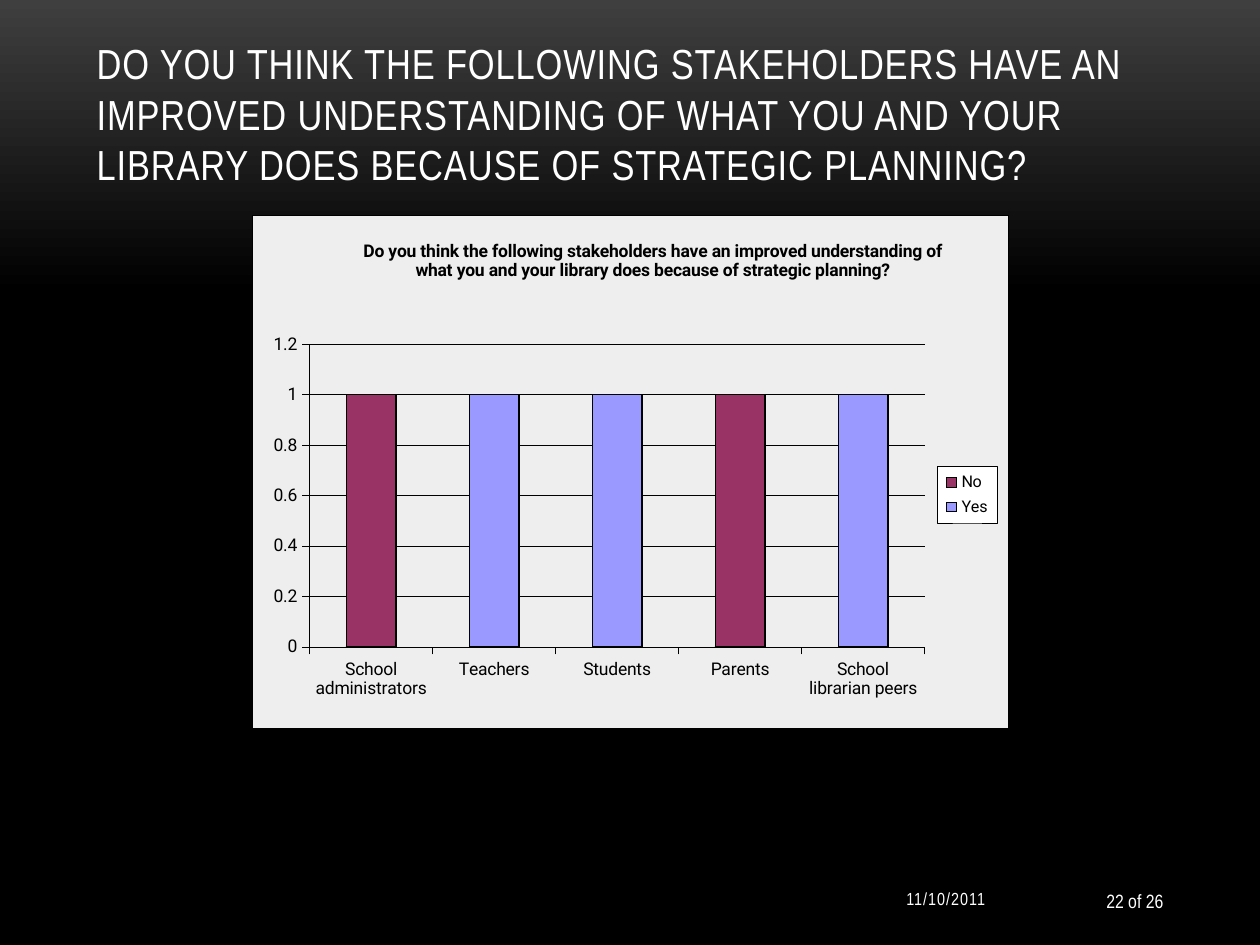
"""Build the survey slide on stakeholders' understanding of strategic planning."""
from pptx import Presentation
from pptx.chart.data import CategoryChartData
from pptx.dml.color import RGBColor as RGB
from pptx.enum.chart import XL_CHART_TYPE as ChartType, XL_LEGEND_POSITION as LegendSide, XL_TICK_MARK as Tick
from pptx.enum.text import MSO_ANCHOR as Anchor, MSO_AUTO_SIZE as AutoSize, PP_ALIGN as Align
from pptx.oxml import parse_xml
from pptx.oxml.ns import nsdecls, qn
from pptx.util import Pt

COLORS = {"white": "FFFFFF", "black": "000000", "glow": "3F3F3F",
          "panel": "EEEEEE", "Yes": "9999FF", "No": "993366"}
QUESTION = ("Do you think the following stakeholders have an improved understanding "
            "of what you and your library does because of strategic planning?")


def place(element, before, **fractions):
    for old in element.findall(qn("c:layout")):
        element.remove(old)
    inner = '<c:layoutTarget val="inner"/>' if before == "c:barChart" else ""
    modes = "".join(f'<c:{axis}Mode val="edge"/>' for axis in "xy")
    values = "".join(f'<c:{key} val="{value}"/>' for key, value in fractions.items())
    element.find(qn(before)).addprevious(parse_xml(
        f'<c:layout {nsdecls("c")}><c:manualLayout>{inner}{modes}{values}</c:manualLayout></c:layout>'))


def shape_properties(fill, border=True):
    stroke = f'<a:solidFill><a:srgbClr val="{COLORS["black"]}"/></a:solidFill>' if border else "<a:noFill/>"
    return parse_xml(f'<c:spPr {nsdecls("c", "a")}><a:solidFill><a:srgbClr val="{COLORS[fill]}"/></a:solidFill>'
                     f'<a:ln w="{Pt(0.25)}">{stroke}</a:ln></c:spPr>')


deck = Presentation()
deck.slide_width, deck.slide_height = Pt(720), Pt(540)
page = deck.slides.add_slide(deck.slide_layouts[5])

backdrop = page.background.fill
backdrop.gradient()
backdrop.gradient_angle = 270
for stop, position, color in zip(backdrop.gradient_stops, (0, 0.31), ("glow", "black")):
    stop.position = position
    stop.color.rgb = RGB.from_string(COLORS[color])

title = page.shapes.title
title.left, title.top, title.width, title.height = Pt(48), Pt(21.6), Pt(624), Pt(90)
number = page.shapes.add_textbox(Pt(594), Pt(500.4), Pt(78), Pt(28.8))
date = page.shapes.add_textbox(Pt(450), Pt(499), Pt(120), Pt(28.8))
for box, text, size, spacing, align, anchor in (
        (title, QUESTION.upper(), 24, 50, Align.LEFT, Anchor.BOTTOM),
        (number, "22 of 26", 11, 0, Align.RIGHT, Anchor.MIDDLE),
        (date, "11/10/2011", 10, 60, Align.RIGHT, Anchor.MIDDLE)):
    frame = box.text_frame
    frame.word_wrap = True
    frame.auto_size = AutoSize.NONE
    frame.vertical_anchor = anchor
    para = frame.paragraphs[0]
    para.alignment = align
    span = para.add_run()
    span.text = text
    span.font.name = "Arial Narrow"
    span.font.size = Pt(size)
    span.font.color.rgb = RGB.from_string(COLORS["white"])
    span.font._element.set("spc", str(spacing))

data = CategoryChartData()
data.categories = ["School administrators", "Teachers", "Students", "Parents", "School librarian peers"]
data.add_series("Yes", (0, 1, 1, 0, 1))
data.add_series("No", (1, 0, 0, 1, 0))
chart = page.shapes.add_chart(ChartType.COLUMN_STACKED, Pt(144), Pt(123.1), Pt(432), Pt(293), data).chart

chart.has_title = True
heading = chart.chart_title.text_frame.paragraphs[0].add_run()
heading.text = QUESTION
heading.font.bold = True
chart.has_legend = True
legend = chart.legend
legend.position = LegendSide.RIGHT
legend.include_in_layout = False
axes = chart.category_axis, chart.value_axis
for font, size in ((chart.font, 10), (heading.font, 10), (legend.font, 9.2),
                   *((axis.tick_labels.font, 10) for axis in axes)):
    font.name = "Roboto"
    font.size = Pt(size)
    font.color.rgb = RGB.from_string(COLORS["black"])

chart.value_axis.minimum_scale = 0
chart.value_axis.maximum_scale = 1.2
chart.value_axis.major_unit = 0.2
chart.value_axis.has_major_gridlines = True
for axis in axes:
    axis.major_tick_mark = Tick.OUTSIDE
    axis.minor_tick_mark = Tick.NONE
for line in (*(axis.format.line for axis in axes), chart.value_axis.major_gridlines.format.line):
    line.color.rgb = RGB.from_string(COLORS["black"])
    line.width = Pt(0.25)

plot = chart.plots[0]
plot.gap_width, plot.overlap = 150, 100
plot.vary_by_categories = False
for series in plot.series:
    series.format.fill.solid()
    series.format.fill.fore_color.rgb = RGB.from_string(COLORS[series.name])
    series.format.line.color.rgb = RGB.from_string(COLORS["black"])
    series.format.line.width = Pt(1)

space = chart._chartSpace
plot_area = space.find(".//" + qn("c:plotArea"))
legend_box = space.find(".//" + qn("c:legend"))
place(plot_area, "c:barChart", x=0.076, y=0.251, w=0.814, h=0.591)
place(space.find(".//" + qn("c:title")), "c:overlay", x=0.143, y=0.04)
place(legend_box, "c:overlay", x=0.907, y=0.49, w=0.079, h=0.11)
plot_area.append(shape_properties("panel", border=False))
legend_box.find(qn("c:overlay")).addnext(shape_properties("white"))
space.find(qn("c:chart")).addnext(shape_properties("panel"))

deck.save("out.pptx")
